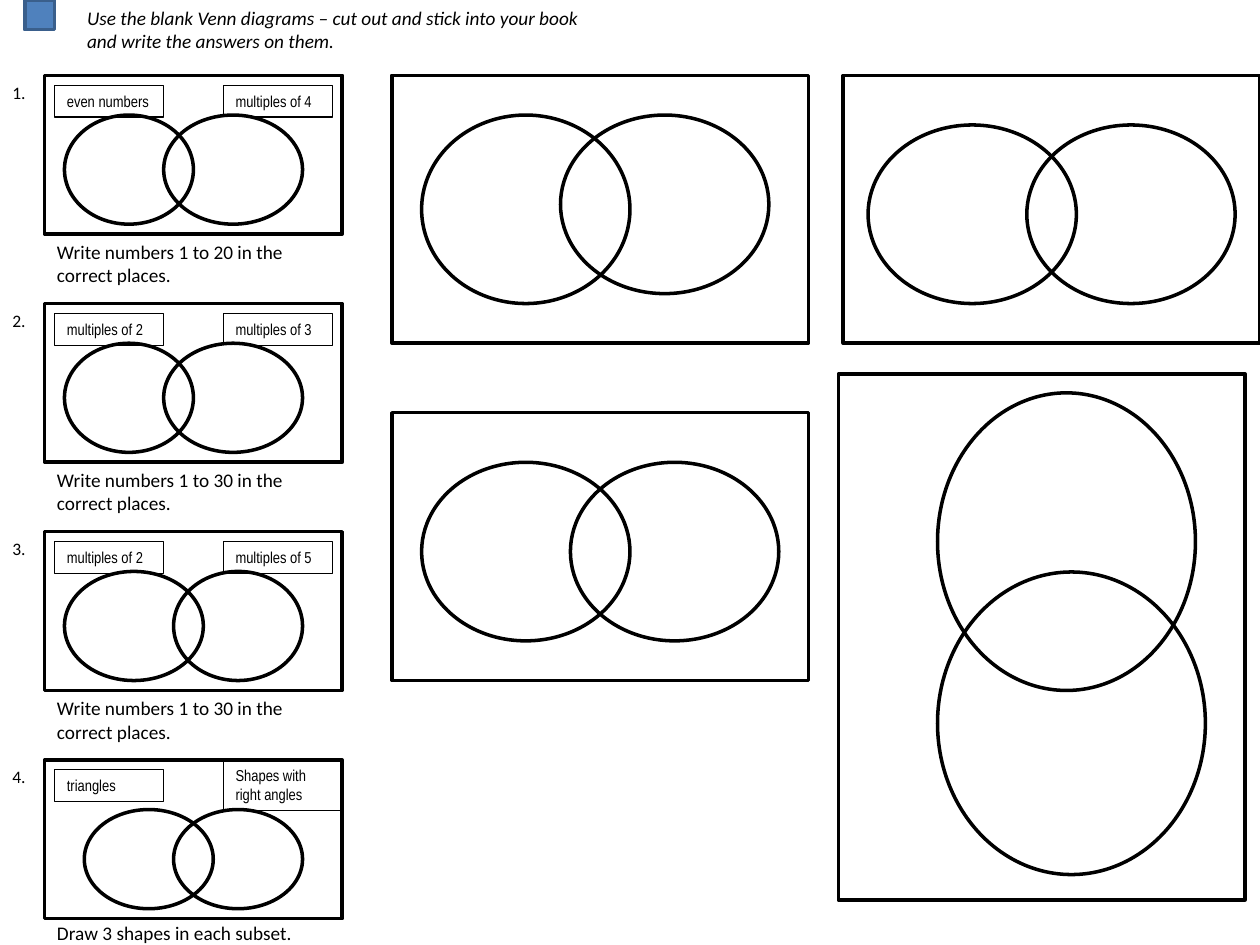
from dataclasses import dataclass
from pptx import Presentation
from pptx.dml.color import RGBColor
from pptx.enum.shapes import MSO_SHAPE
from pptx.enum.text import MSO_ANCHOR, MSO_AUTO_SIZE, PP_ALIGN
from pptx.util import Cm, Pt


@dataclass(frozen=True)
class Theme:
    ink: str = "000000"
    paper: str = "FFFFFF"
    blue: str = "4F81BD"
    edge: str = "3A5F8C"
    body: str = "Calibri"
    narrow: str = "Arial Narrow"
    text: float = 11
    count: float = 10
    small: float = 9
    thick: float = 2
    thin: float = 0.75


def write(frame, text, font, size, color, italic=False):
    frame.word_wrap = True
    frame.auto_size = MSO_AUTO_SIZE.SHAPE_TO_FIT_TEXT
    frame.vertical_anchor = MSO_ANCHOR.TOP
    para = frame.paragraphs[0]
    para.alignment = PP_ALIGN.LEFT
    run = para.add_run()
    run.text = text
    run.font.name = font
    run.font.size = Pt(size)
    run.font.italic = italic
    run.font.color.rgb = RGBColor.from_string(color)


class Sheet:
    def __init__(self, slide, theme):
        self.slide = slide
        self.theme = theme

    def shape(self, kind, box, fill=None, line=None, width=None, turn=0):
        item = self.slide.shapes.add_shape(kind, *map(Cm, box))
        item.shadow.inherit = False
        item.rotation = turn
        if fill:
            item.fill.solid()
            item.fill.fore_color.rgb = RGBColor.from_string(fill)
        else:
            item.fill.background()
        item.line.color.rgb = RGBColor.from_string(line or self.theme.ink)
        item.line.width = Pt(width or self.theme.thick)
        return item

    def frame(self, *box, **style):
        return self.shape(MSO_SHAPE.RECTANGLE, box, **style)

    def ring(self, *box, **style):
        return self.shape(MSO_SHAPE.OVAL, box, **style)

    def label(self, text, *box):
        item = self.frame(*box, width=self.theme.thin)
        write(item.text_frame, text, font=self.theme.narrow,
              size=self.theme.small, color=self.theme.ink)

    def note(self, text, size, *box):
        item = self.slide.shapes.add_textbox(*map(Cm, box))
        write(item.text_frame, text, font=self.theme.body, size=size,
              color=self.theme.ink)

    def title(self, text, *box):
        item = self.slide.shapes.title
        item.left, item.top, item.width, item.height = map(Cm, box)
        write(item.text_frame, text, font=self.theme.body,
              size=self.theme.text, color=self.theme.ink, italic=True)

    def task(self, num, top, names, rings, note):
        tall = num == 4
        self.note(f"{num}.", self.theme.count, 0, top, 0.9, 0.68)
        self.frame(0.9, top, 6, 3.2)
        self.label(names[0], 1.1, top + 0.2, 2.2, 0.64)
        if tall:
            self.label(names[1], 4.5, top, 2.4, 1.02)
        else:
            self.label(names[1], 4.5, top + 0.2, 2.2, 0.64)
        drop, high = (1, 2) if tall else (0.8, 2.2)
        for left, wide, fill in rings:
            self.ring(left, top + drop, wide, high, fill=fill)
        gap, deep = (3.12, 0.74) if tall else (3.2, 1.2)
        self.note(note, self.theme.text, 0.9, top + gap, 6, deep)


def main():
    deck = Presentation()
    deck.slide_width, deck.slide_height = Cm(25.4), Cm(19.05)
    theme = Theme()
    sheet = Sheet(deck.slides.add_slide(deck.slide_layouts[5]), theme)

    sheet.title("Use the blank Venn diagrams – cut out and stick into your "
                "book and write the answers on them.", 1.5, 0, 10.6, 1.2)
    sheet.frame(0.5, 0, 0.6, 0.6, fill=theme.blue, line=theme.edge)

    white = theme.paper
    pair = [(3.3, 2.8, white), (1.3, 2.6, None)]
    ask = "Write numbers 1 to {} in the correct places."
    tasks = [
        (("even numbers", "multiples of 4"), pair, ask.format(20)),
        (("multiples of 2", "multiples of 3"), pair, ask.format(30)),
        (("multiples of 2", "multiples of 5"),
         [(1.3, 2.8, white), (3.5, 2.6, None)], ask.format(30)),
        (("triangles", "Shapes with right angles"),
         [(1.7, 2.6, None), (3.5, 2.6, None)],
         "Draw 3 shapes in each subset."),
    ]
    for row, (names, rings, note) in enumerate(tasks):
        sheet.task(row + 1, 1.52 + 4.6 * row, names, rings, note)

    for left, top in [(7.9, 1.52), (17, 1.52), (7.9, 8.32)]:
        sheet.frame(left, top, 8.4, 5.4)
    sheet.frame(15.7, 8.74, 10.6, 8.2, turn=270)

    sheet.ring(8.5, 2.32, 4.2, 3.8, fill=white)
    for left, top in [(11.3, 2.32), (20.7, 2.52), (17.5, 2.52),
                      (11.5, 9.32), (8.5, 9.32)]:
        sheet.ring(left, top, 4.2, 3.6)
    sheet.ring(18.9, 7.92, 5.2, 6)
    sheet.ring(18.55, 11.88, 6.1, 5.4, turn=270)

    deck.save("out.pptx")


if __name__ == "__main__":
    main()
